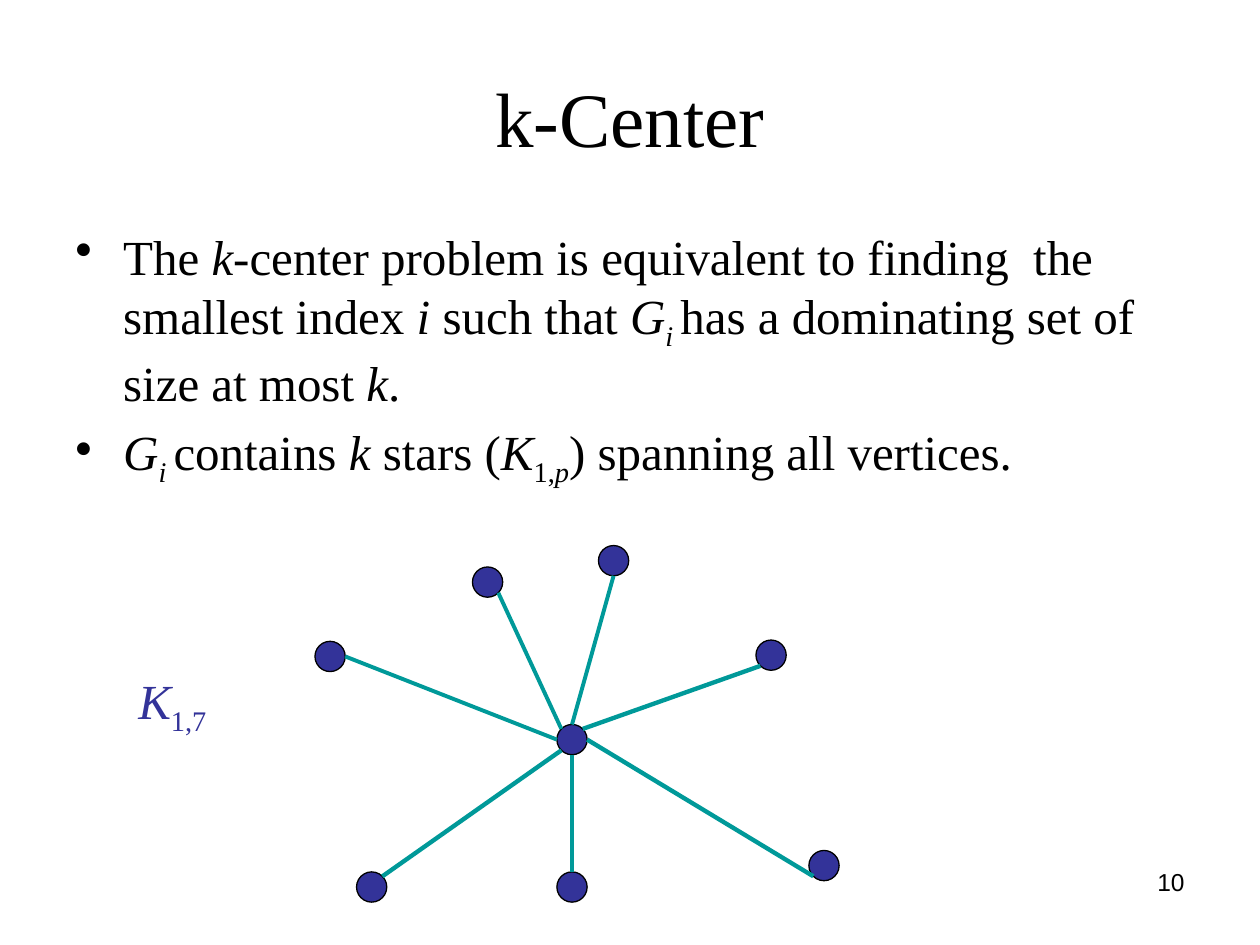
"""Build the k-Center slide with its K1,7 star graph."""
from lxml import etree
from pptx import Presentation
from pptx import util as u
from pptx.dml.color import RGBColor
from pptx.enum import shapes, text
from pptx.oxml.ns import qn

THEME = {
    "serif": "Times New Roman", "sans": "Arial",
    "ink": "000000", "node": "333399", "edge": "009999", "paper": "FFFFFF",
    "title": 44, "body": 28, "number": 14, "outline": 0.75,
}

TITLE = "k-Center"
PAGE = "10"
BULLETS = [
    [("The ", ""), ("k-", "i"), ("center problem is equivalent to finding  the smallest index ", ""),
     ("i", "i"), (" such that ", ""), ("G", "i"), ("i ", "i_"),
     ("has a dominating set of size at most ", ""), ("k", "i"), (".", "")],
    [("G", "i"), ("i ", "i_"), ("contains ", ""), ("k ", "i"), ("stars (", ""),
     ("K", "i"), ("1,", "_"), ("p", "i_"), (") spanning all vertices.", "")],
]
STAR_NAME = [("K", "i"), ("1,7", "_")]

DIAMETER = 0.24
HUB = (4.42, 5.75)
LEAVES = [
    ((2.83, 6.92), (-1, 1), (1, -1), 2.5),
    ((4.75, 4.33), (0, -1), (0, 1), 2.25),
    ((6, 5.08), (1, -1), (-1, 1), 2.5),
    ((3.75, 4.5), (-1, -1), (1, 1), 2.25),
    ((2.5, 5.09), (-1, 0), (1, 0), 2.25),
    ((6.42, 6.75), (1, 0), (-1, 1), 2.5),
    ((4.42, 6.92), (0, 1), (0, -1), 2.5),
]


def color(name):
    return RGBColor.from_string(THEME[name])


def add_runs(p, runs, size, font="serif", ink="ink"):
    for content, style in runs:
        r = p.add_run()
        r.text = content
        r.font.size, r.font.name = u.Pt(THEME[size]), THEME[font]
        r.font.color.rgb = color(ink)
        r.font.italic = "i" in style
        if "_" in style:
            r.font._element.set("baseline", "-25000")


def add_box(s, x, y, w, h):
    sp = s.shapes.add_textbox(*map(u.Inches, (x, y, w, h)))
    sp.text_frame.word_wrap = True
    return sp


def set_bullet(p):
    pPr = p._p.get_or_add_pPr()
    pPr.set("marL", str(u.Inches(0.38)))
    pPr.set("indent", str(-u.Inches(0.38)))
    before = etree.SubElement(pPr, qn("a:spcBef"))
    etree.SubElement(before, qn("a:spcPct")).set("val", "20000")
    etree.SubElement(pPr, qn("a:buChar")).set("char", "•")


def add_node(s, corner):
    sp = s.shapes.add_shape(shapes.MSO_SHAPE.OVAL, *map(u.Inches, (*corner, DIAMETER, DIAMETER)))
    sp.shadow.inherit = False
    sp.fill.solid()
    sp.fill.fore_color.rgb = color("node")
    sp.line.color.rgb = color("ink")
    sp.line.width = u.Pt(THEME["outline"])


def rim_point(corner, direction):
    length = sum(d * d for d in direction) ** 0.5
    return [u.Inches(c + DIAMETER / 2 * (1 + d / length)) for c, d in zip(corner, direction)]


def add_edge(s, begin, end, width):
    line = s.shapes.add_connector(shapes.MSO_CONNECTOR.STRAIGHT, *begin, *end)
    line.line.color.rgb = color("edge")
    line.line.width = u.Pt(width)
    etree.SubElement(line._element.spPr, qn("a:effectLst"))


def main():
    prs = Presentation()
    prs.slide_width, prs.slide_height = u.Inches(10), u.Inches(7.5)
    s = prs.slides.add_slide(prs.slide_layouts[5])

    title = s.shapes.title
    title.left, title.top, title.width, title.height = map(u.Inches, (0.5, 0.3, 9, 1.25))
    tf = title.text_frame
    tf.vertical_anchor = text.MSO_ANCHOR.MIDDLE
    p = tf.paragraphs[0]
    p.alignment = text.PP_ALIGN.CENTER
    add_runs(p, [(TITLE, "")], "title")

    p = add_box(s, 7.17, 6.83, 2.33, 0.52).text_frame.paragraphs[0]
    p.alignment = text.PP_ALIGN.RIGHT
    add_runs(p, [(PAGE, "")], "number", "sans")

    tf = add_box(s, 0.5, 1.75, 9, 2.67).text_frame
    for i, runs in enumerate(BULLETS):
        p = tf.add_paragraph() if i else tf.paragraphs[0]
        set_bullet(p)
        add_runs(p, runs, "body")

    for corner in [HUB, *(leaf[0] for leaf in LEAVES)]:
        add_node(s, corner)
    for corner, hub_side, leaf_side, width in LEAVES:
        add_edge(s, rim_point(HUB, hub_side), rim_point(corner, leaf_side), width)

    label = add_box(s, 1, 5.27, 0.8, 0.58)
    label.line.color.rgb = color("paper")
    label.line.width = u.Pt(THEME["outline"])
    tf = label.text_frame
    tf.word_wrap = False
    tf.auto_size = text.MSO_AUTO_SIZE.SHAPE_TO_FIT_TEXT
    add_runs(tf.paragraphs[0], STAR_NAME, "body", ink="node")

    prs.save("out.pptx")


if __name__ == "__main__":
    main()
